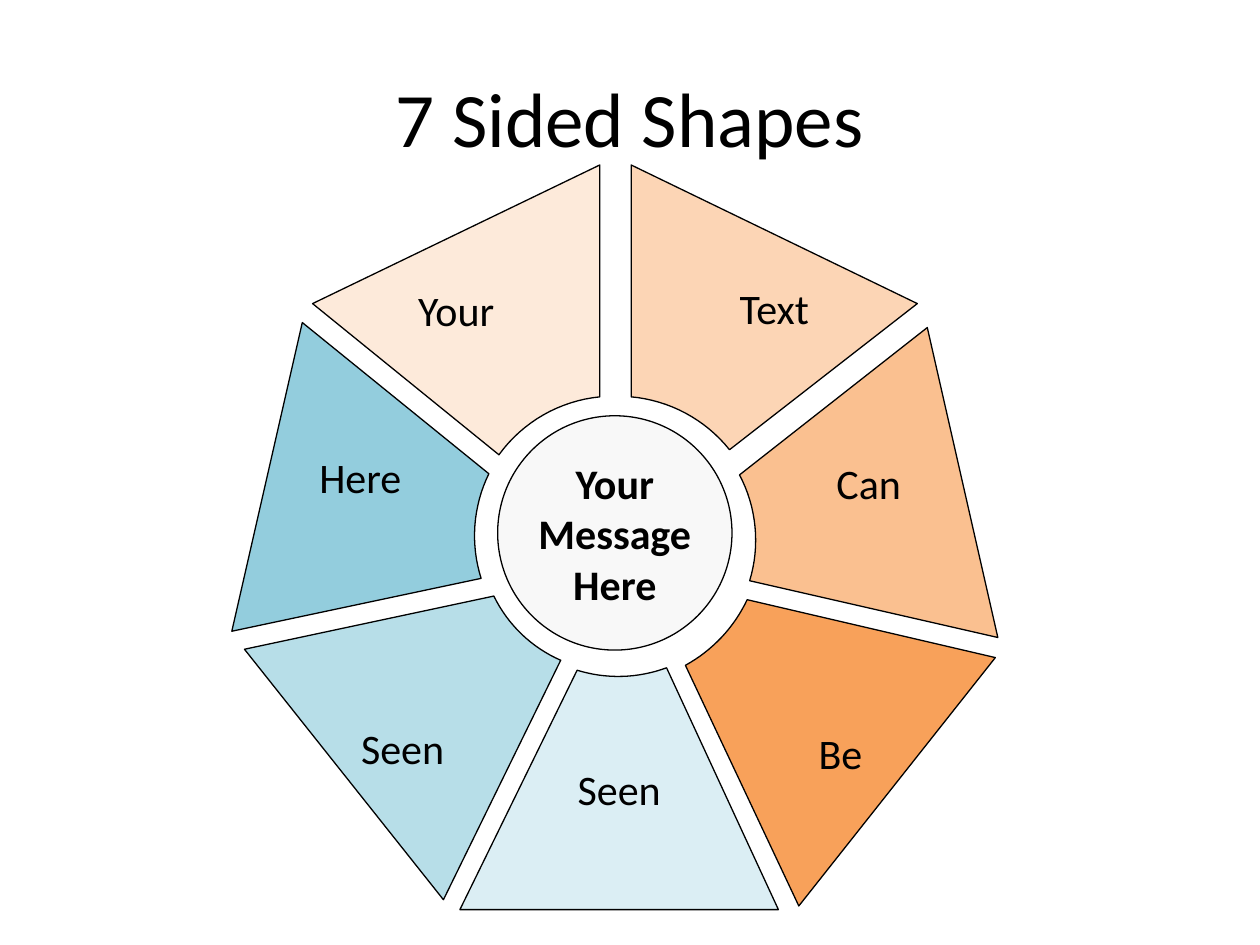
"""Build a seven-sided wheel of labelled wedges around a central message."""
import math

from pptx import Presentation
from pptx.dml.color import RGBColor
from pptx.enum.shapes import MSO_SHAPE
from pptx.enum.text import MSO_ANCHOR, PP_ALIGN
from pptx.util import Pt

OVAL = MSO_SHAPE.OVAL
MIDDLE = MSO_ANCHOR.MIDDLE
CENTER = PP_ALIGN.CENTER

FONT = "Calibri"
BLACK = RGBColor(0x00, 0x00, 0x00)
HUB_FILL = RGBColor(0xF8, 0xF8, 0xF8)
PALE_ORANGE = RGBColor(0xFD, 0xEA, 0xDA)
LIGHT_ORANGE = RGBColor(0xFC, 0xD5, 0xB5)
MID_ORANGE = RGBColor(0xFA, 0xC0, 0x90)
STRONG_ORANGE = RGBColor(0xF8, 0xA1, 0x5A)
PALE_BLUE = RGBColor(0xDB, 0xEE, 0xF4)
LIGHT_BLUE = RGBColor(0xB7, 0xDE, 0xE8)
MID_BLUE = RGBColor(0x93, 0xCD, 0xDD)

ARC_CENTER = (351.7, 307.1)
ARC_STEPS = 16

# Label, fill, two outer corners, then the start and end of the inner arc.
WEDGES = [
    ("Your", PALE_ORANGE, [(342.7, 94.3), (178.6, 173.5)], (285.1, 259.9), (342.7, 226.8)),
    ("Here", MID_BLUE, [(172.8, 184.3), (132.5, 360.7)], (275, 330.5), (279.4, 270.7)),
    ("Text", LIGHT_ORANGE, [(524.2, 173.5), (360.7, 94.3)], (360.7, 226.8), (416.9, 257)),
    ("Be", STRONG_ORANGE, [(456.5, 517.7), (568.8, 375.8)], (427, 342.7), (391.7, 380.2)),
    ("Can", MID_ORANGE, [(570.2, 364.3), (529.9, 187.2)], (422.6, 271.4), (428.4, 331.9)),
    ("Seen", LIGHT_BLUE, [(139.7, 371), (253.4, 514.1)], (320.4, 377.3), (282.2, 340.6)),
    ("Seen", PALE_BLUE, [(262.8, 519.8), (444.8, 519.8)], (380.9, 381.6), (329.8, 383)),
]


def add_run(p, text, size, bold=False):
    """Add one formatted run to a centred paragraph."""
    p.alignment = CENTER
    r = p.add_run()
    r.text = text
    r.font.name = FONT
    r.font.size = Pt(size)
    r.font.bold = bold
    r.font.color.rgb = BLACK


def style_shape(s, fill):
    """Give a shape its fill, hairline outline and middle anchor."""
    s.shadow.inherit = False
    s.fill.solid()
    s.fill.fore_color.rgb = fill
    s.line.color.rgb = BLACK
    s.line.width = Pt(0)
    s.text_frame.vertical_anchor = MIDDLE


def arc_points(start, end):
    """Return points that sweep around the wheel centre from start to end."""
    cx, cy = ARC_CENTER
    (r0, a0), (r1, a1) = [
        (math.hypot(x - cx, y - cy), math.atan2(y - cy, x - cx)) for x, y in (start, end)
    ]
    sweep = math.remainder(a1 - a0, math.tau)
    points = []
    for i in range(ARC_STEPS + 1):
        t = i / ARC_STEPS
        radius, angle = r0 + (r1 - r0) * t, a0 + sweep * t
        points.append((cx + radius * math.cos(angle), cy + radius * math.sin(angle)))
    return points


def add_title(slide, text):
    """Add the slide title."""
    tf = slide.shapes.add_textbox(Pt(36), Pt(21.6), Pt(648), Pt(90)).text_frame
    tf.word_wrap = True
    tf.vertical_anchor = MIDDLE
    add_run(tf.paragraphs[0], text, 44)


def add_wedge(slide, label, fill, outer, start, end):
    """Add one labelled wedge with a curved inner edge."""
    first, *rest = [(Pt(x), Pt(y)) for x, y in outer + arc_points(start, end)]
    builder = slide.shapes.build_freeform(*first)
    builder.add_line_segments(rest, close=True)
    s = builder.convert_to_shape()
    style_shape(s, fill)
    add_run(s.text_frame.paragraphs[0], label, 24)


def add_hub(slide):
    """Add the central circle with its message."""
    s = slide.shapes.add_shape(OVAL, Pt(284.4), Pt(237.6), Pt(133.9), Pt(133.9))
    style_shape(s, HUB_FILL)
    tf = s.text_frame
    tf.margin_left = tf.margin_right = tf.margin_top = tf.margin_bottom = 0
    add_run(tf.paragraphs[0], "Your", 24, bold=True)
    p = tf.add_paragraph()
    add_run(p, "Message", 24, bold=True)
    p.add_line_break()
    add_run(p, "Here", 24, bold=True)


def main():
    """Create and save the presentation."""
    prs = Presentation()
    prs.slide_width, prs.slide_height = Pt(720), Pt(540)
    slide = prs.slides.add_slide(prs.slide_layouts[6])
    add_title(slide, "7 Sided Shapes")
    for wedge in WEDGES:
        add_wedge(slide, *wedge)
    add_hub(slide)
    prs.save("out.pptx")


if __name__ == "__main__":
    main()
